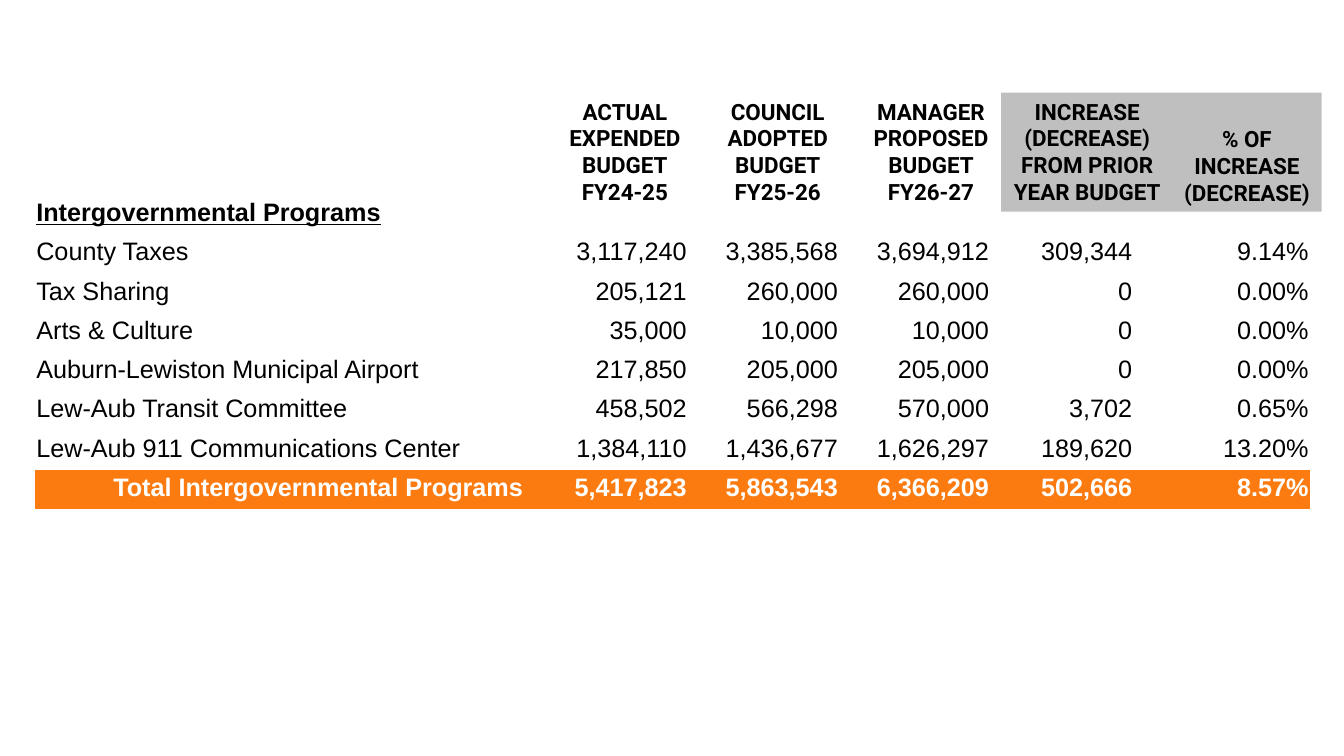
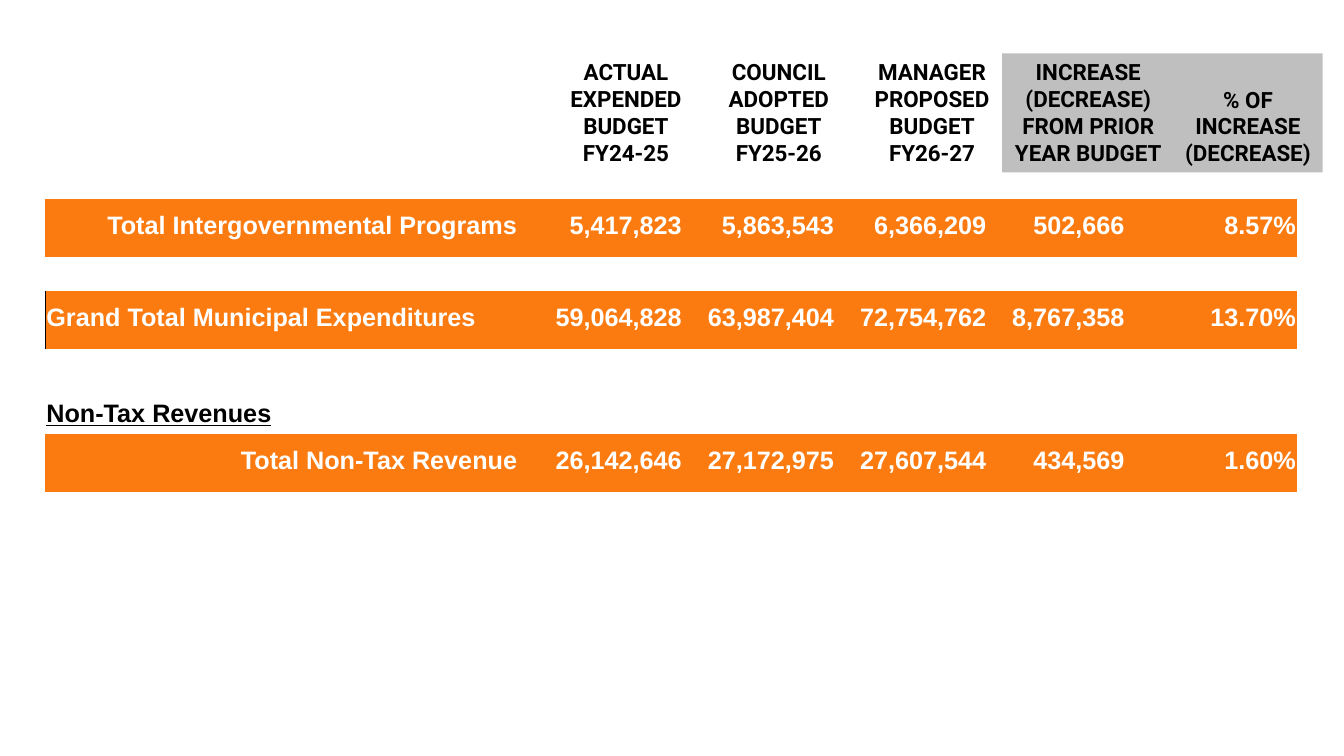
from lxml import etree
from pptx import Presentation
from pptx.dml.color import RGBColor
from pptx.enum.shapes import MSO_SHAPE as Shape
from pptx.enum.text import MSO_ANCHOR as Anchor, MSO_AUTO_SIZE as AutoSize, PP_ALIGN as Align
from pptx.oxml.ns import qn
from pptx.util import Inches, Pt

ORANGE, GRAY, BLACK, WHITE = "FB7B11", "BFBFBF", "000000", "FFFFFF"
NO_STYLE_NO_GRID = "{2D5ABB26-0587-4C30-8999-92F81FD0307C}"

presentation = Presentation()
presentation.slide_width = Inches(13.33)
presentation.slide_height = Inches(7.5)


def color(hex_string):
    return RGBColor.from_string(hex_string)


def shares(*percents):
    """Lengths along x, y, x, y, ... as percentages of the slide's size."""
    sides = (presentation.slide_width, presentation.slide_height)
    return [round(percent * sides[i % 2] / 100) for i, percent in enumerate(percents)]


# Shared header: left, width (share of slide width) and lines
HEADERS = [
    (41.4, 10.2, "ACTUAL\nEXPENDED\nBUDGET\nFY24-25"),
    (53.18, 9.38, "COUNCIL\nADOPTED\nBUDGET\nFY25-26"),
    (64.13, 10.28, "MANAGER\nPROPOSED\nBUDGET\nFY26-27"),
    (74.48, 12.83, "INCREASE\n(DECREASE)\nFROM PRIOR\nYEAR BUDGET"),
    (87.3, 10.95, "% OF\nINCREASE\n(DECREASE)"),
]
HEADER_FONT = {"name": "Roboto", "size": Pt(16), "bold": True}
LINE_SHARE, PADDING_SHARE = 3.6, 1.33

# Row formats: font, label alignment, text colour, fill
BASE_FONT = {"name": "Arial", "size": Pt(18), "bold": False}
BOLD_FONT = BASE_FONT | {"bold": True}
ROW_FORMATS = {
    "item": (BASE_FONT, Align.LEFT, BLACK, None),
    "heading": (BOLD_FONT | {"underline": True}, Align.LEFT, BLACK, None),
    "total": (BOLD_FONT, Align.RIGHT, WHITE, ORANGE),
    "grand": (BOLD_FONT, Align.LEFT, WHITE, ORANGE),
}
VALUE_COLUMNS = (2, 3, 4, 5, 7)
SPACER_COLUMNS = (1, 6)

# Rows: format, height (share of slide height), label, values
INTERGOVERNMENTAL = ("Total Intergovernmental Programs",
                     "5,417,823 5,863,543 6,366,209 502,666 8.57%")
SLIDES = [
    {
        "header_bottom": 28, "header_shift": 0, "left": 2.63, "top": 25.73,
        "columns": [36.38, 1.43, 11.25, 11.25, 11.25, 10.65, 1.43, 11.18],
        "anchor": Anchor.BOTTOM, "bottom_margin": 0.07,
        "rows": [
            ("heading", 5.2, "Intergovernmental Programs", ""),
            ("item", 5.2, "County Taxes", "3,117,240 3,385,568 3,694,912 309,344 9.14%"),
            ("item", 5.2, "Tax Sharing", "205,121 260,000 260,000 0 0.00%"),
            ("item", 5.2, "Arts & Culture", "35,000 10,000 10,000 0 0.00%"),
            ("item", 5.2, "Auburn-Lewiston Municipal Airport",
             "217,850 205,000 205,000 0 0.00%"),
            ("item", 5.2, "Lew-Aub Transit Committee",
             "458,502 566,298 570,000 3,702 0.65%"),
            ("item", 5.2, "Lew-Aub 911 Communications Center",
             "1,384,110 1,436,677 1,626,297 189,620 13.20%"),
            ("total", 5.2, *INTERGOVERNMENTAL),
        ],
    },
    {
        "header_bottom": 22.8, "header_shift": 0.08, "left": 3.38, "top": 26.27,
        "columns": [35.18, 1.43, 11.33, 11.33, 11.33, 10.28, 1.43, 10.8],
        "anchor": Anchor.MIDDLE, "bottom_margin": 0.05,
        "rows": [
            ("total", 7.7, *INTERGOVERNMENTAL),
            ("item", 4.53, "", ""),
            ("grand", 7.7, "Grand Total Municipal Expenditures",
             "59,064,828 63,987,404 72,754,762 8,767,358 13.70%"),
            ("item", 6.4, "", ""),
            ("heading", 4.6, "Non-Tax Revenues", ""),
            ("total", 7.7, "Total Non-Tax Revenue",
             "26,142,646 27,172,975 27,607,544 434,569 1.60%"),
        ],
    },
]

for layout in SLIDES:
    slide = presentation.slides.add_slide(presentation.slide_layouts[6])

    # Budget table
    columns, rows = layout["columns"], layout["rows"]
    frame = slide.shapes.add_table(
        len(rows), len(columns),
        *shares(layout["left"], layout["top"], sum(columns), sum(row[1] for row in rows)))
    table = frame.table
    table.first_row = table.horz_banding = False
    table._tbl.tblPr.find(qn("a:tableStyleId")).text = NO_STYLE_NO_GRID
    for column, width in zip(table.columns, columns):
        column.width = shares(width)[0]

    for r, (kind, height, label, values) in enumerate(rows):
        font_format, label_align, text_color, fill = ROW_FORMATS[kind]
        table.rows[r].height = shares(0, height)[1]
        texts = {0: label} | dict(zip(VALUE_COLUMNS, values.split()))
        for c in range(len(columns)):
            cell = table.cell(r, c)
            cell.vertical_anchor = layout["anchor"]
            cell.margin_left = cell.margin_top = Inches(0.01)
            cell.margin_right = Inches(0.08 if c in VALUE_COLUMNS[:-1] else 0.01)
            cell.margin_bottom = Inches(layout["bottom_margin"] if texts.get(c) else 0.01)
            if fill:
                cell.fill.solid()
                cell.fill.fore_color.rgb = color(fill)
            else:
                cell.fill.background()
            if texts.get(c):
                paragraph = cell.text_frame.paragraphs[0]
                paragraph.alignment = Align.RIGHT if c else label_align
                run = paragraph.add_run()
                run.text = texts[c]
                for name, value in font_format.items():
                    setattr(run.font, name, value)
                run.font.color.rgb = color(text_color)
        if not values:
            for c in SPACER_COLUMNS:
                table.cell(r, c).merge(table.cell(r, c + 1))
        if kind == "grand":
            # Thin rule on the left edge; borders come before the fill
            border = etree.Element(qn("a:lnL"), w=str(Pt(0.5)))
            solid = etree.SubElement(border, qn("a:solidFill"))
            etree.SubElement(solid, qn("a:srgbClr"), val=BLACK)
            table.cell(r, 0)._tc.get_or_add_tcPr().insert(0, border)

    # Column headers, with a gray panel behind the last two
    header = slide.shapes.add_group_shape()
    bottom, shift = layout["header_bottom"], layout["header_shift"]
    panel_height = PADDING_SHARE + 4 * LINE_SHARE
    panel = header.shapes.add_shape(
        Shape.RECTANGLE, *shares(HEADERS[3][0] + shift, bottom - panel_height, 23.85, panel_height))
    panel.shadow.inherit = False
    panel.fill.solid()
    panel.fill.fore_color.rgb = color(GRAY)
    panel.line.fill.background()
    for left, width, text in HEADERS:
        height = PADDING_SHARE + LINE_SHARE * len(text.split("\n"))
        box = header.shapes.add_textbox(*shares(left + shift, bottom - height, width, height))
        box.text_frame.word_wrap = False
        box.text_frame.auto_size = AutoSize.SHAPE_TO_FIT_TEXT
        box.text_frame.text = text
        for paragraph in box.text_frame.paragraphs:
            paragraph.alignment = Align.CENTER
            font = paragraph.runs[0].font
            for name, value in HEADER_FONT.items():
                setattr(font, name, value)
            font.color.rgb = color(BLACK)

presentation.save("out.pptx")
